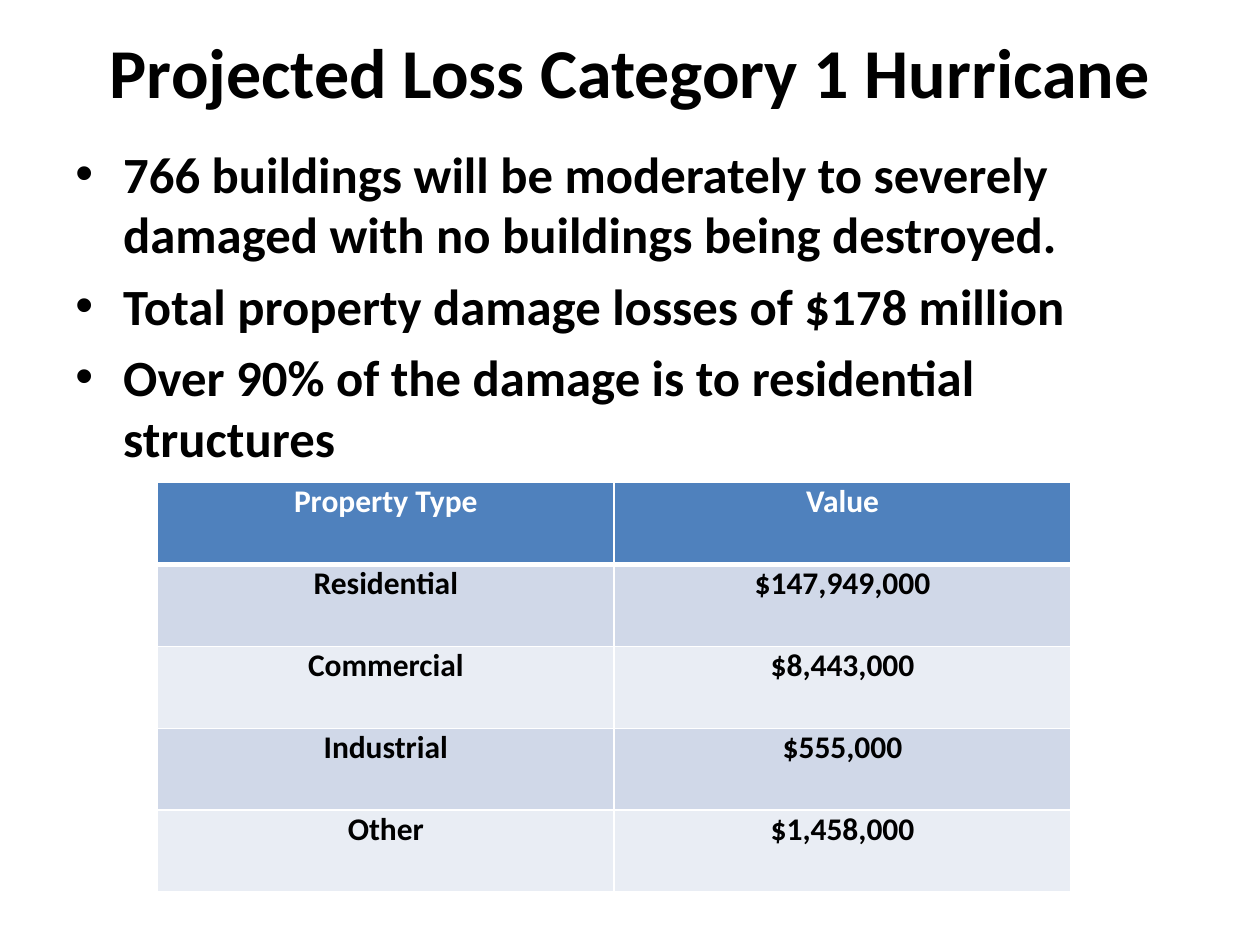
from dataclasses import dataclass

from lxml.etree import SubElement
from pptx import Presentation
from pptx.dml.color import RGBColor as Color
from pptx.enum.text import MSO_ANCHOR as Anchor, PP_ALIGN as Align
from pptx.oxml.ns import qn
from pptx.util import Inches, Pt


@dataclass(frozen=True)
class Theme:
    """Font, colours and type sizes of the slide."""
    font: str = "Calibri"
    text: str = "000000"
    light: str = "FFFFFF"
    header: str = "4F81BD"
    bands: tuple = ("D0D8E8", "E9EDF4")
    title_size: int = 40
    body_size: int = 29
    table_size: int = 18


THEME = Theme()
TITLE = "Projected Loss Category 1 Hurricane"
FINDINGS = (
    "766 buildings will be moderately to severely damaged with no buildings being destroyed.",
    "Total property damage losses of $178 million",
    "Over 90% of the damage is to residential structures",
)
LOSSES = (
    ("Property Type", "Value"),
    ("Residential", "$147,949,000"),
    ("Commercial", "$8,443,000"),
    ("Industrial", "$555,000"),
    ("Other", "$1,458,000"),
)


def apply_format(target, values):
    """Set each named attribute on the target."""
    for name, value in values.items():
        setattr(target, name, value)


def write_paragraph(paragraph, text, size, color=THEME.text, **layout):
    """Fill a paragraph with bold theme text."""
    apply_format(paragraph, layout)
    run = paragraph.add_run()
    run.text = text
    apply_format(run.font, {"name": THEME.font, "size": Pt(size), "bold": True})
    run.font.color.rgb = Color.from_string(color)


def add_text_frame(slide, left, top, width, height, anchor):
    """Add a wrapping text box and return its text frame."""
    box = slide.shapes.add_textbox(*map(Inches, (left, top, width, height)))
    apply_format(box.text_frame, {"word_wrap": True, "vertical_anchor": anchor})
    return box.text_frame


def add_title(slide, text):
    """Add the centred slide title."""
    frame = add_text_frame(slide, 0.5, 0.17, 9, 0.78, Anchor.MIDDLE)
    write_paragraph(frame.paragraphs[0], text, THEME.title_size, alignment=Align.CENTER)


def add_bullets(slide, items):
    """Add the bulleted findings with hanging indents."""
    frame = add_text_frame(slide, 0.5, 1.08, 9, 6.25, Anchor.TOP)
    for index, item in enumerate(items):
        paragraph = frame.add_paragraph() if index else frame.paragraphs[0]
        properties = paragraph._p.get_or_add_pPr()
        properties.set("marL", str(Inches(0.38)))
        properties.set("indent", str(-Inches(0.38)))
        SubElement(properties, qn("a:buFont"), typeface="Arial")
        SubElement(properties, qn("a:buChar"), char="•")
        space = Pt(0.2 * THEME.body_size if index else 0)
        write_paragraph(paragraph, item, THEME.body_size, space_before=space)


def add_borders(cell, widths):
    """Draw light borders with a width in points for each side."""
    properties = cell._tc.get_or_add_tcPr()
    for side, width in widths.items():
        line = SubElement(properties, qn(f"a:ln{side}"), w=str(Pt(width)))
        fill = SubElement(line, qn("a:solidFill"))
        SubElement(fill, qn("a:srgbClr"), val=THEME.light)


def format_cell(cell, text, row):
    """Write one cell with the style of its row."""
    apply_format(cell, {
        "margin_left": Inches(0.07), "margin_right": Inches(0.07),
        "margin_top": 0, "margin_bottom": 0, "vertical_anchor": Anchor.TOP,
    })
    add_borders(cell, {"L": 1, "R": 1, "T": 3 if row == 1 else 1, "B": 1 if row else 3})
    cell.fill.solid()
    fill = THEME.bands[(row - 1) % 2] if row else THEME.header
    cell.fill.fore_color.rgb = Color.from_string(fill)
    color = THEME.text if row else THEME.light
    write_paragraph(cell.text_frame.paragraphs[0], text, THEME.table_size, color,
                    alignment=Align.CENTER)


def add_loss_table(slide, rows):
    """Add the table of losses by property type."""
    bounds = map(Inches, (1.25, 3.83, 7.25, 3.25))
    table = slide.shapes.add_table(len(rows), len(rows[0]), *bounds).table
    for row, values in enumerate(rows):
        for column, text in enumerate(values):
            format_cell(table.cell(row, column), text, row)


def main():
    """Build and save the slide."""
    presentation = Presentation()
    apply_format(presentation, {"slide_width": Inches(10), "slide_height": Inches(7.5)})
    slide = presentation.slides.add_slide(presentation.slide_layouts[6])
    add_title(slide, TITLE)
    add_bullets(slide, FINDINGS)
    add_loss_table(slide, LOSSES)
    presentation.save("out.pptx")


if __name__ == "__main__":
    main()
